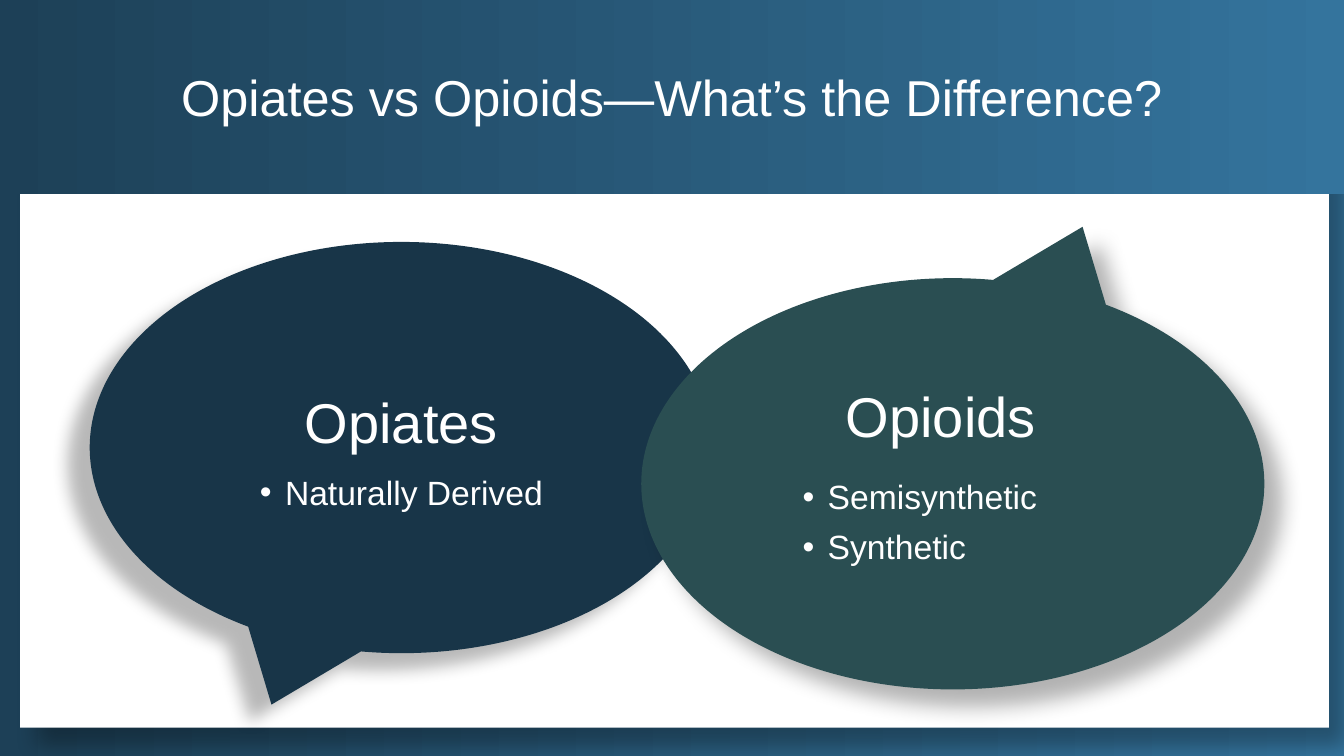
from dataclasses import dataclass

from lxml import etree
from pptx import Presentation
from pptx.dml.color import RGBColor
from pptx.enum.shapes import MSO_SHAPE
from pptx.enum.text import MSO_ANCHOR, MSO_AUTO_SIZE, PP_ALIGN
from pptx.oxml.ns import qn
from pptx.util import Inches, Pt

RECTANGLE = MSO_SHAPE.RECTANGLE
CALLOUT = MSO_SHAPE.OVAL_CALLOUT
MIDDLE = MSO_ANCHOR.MIDDLE
NO_FIT = MSO_AUTO_SIZE.NONE
CENTER, LEFT = PP_ALIGN.CENTER, PP_ALIGN.LEFT


@dataclass(frozen=True)
class Theme:
    font: str = "Arial"
    white: str = "FFFFFF"
    gradient: tuple = ("1D4057", "34749D")
    opiates: str = "183548"
    opioids: str = "2A4E52"
    shadow: str = "000000"
    title_size: int = 36
    heading_size: int = 40
    bullet_size: int = 24


class SlideBuilder:
    def __init__(self, slide, theme):
        self.slide = slide
        self.theme = theme

    def gradient(self, fill):
        fill.gradient()
        fill.gradient_angle = 0
        for stop, color in zip(fill.gradient_stops, self.theme.gradient):
            stop.color.rgb = RGBColor.from_string(color)

    def format_runs(self, paragraph, size):
        for run in paragraph.runs:
            run.font.name = self.theme.font
            run.font.size = Pt(size)
            run.font.color.rgb = RGBColor.from_string(self.theme.white)

    def title(self, text, box):
        title = self.slide.shapes.title
        title.left, title.top, title.width, title.height = map(Inches, box)
        self.gradient(title.fill)
        frame = title.text_frame
        frame.text = text
        frame.auto_size = NO_FIT
        frame.vertical_anchor = MIDDLE
        frame.paragraphs[0].alignment = CENTER
        self.format_runs(frame.paragraphs[0], self.theme.title_size)

    def shape(self, kind, box, color, opacity=30, blur=15, distance=18, angle=45):
        shape = self.slide.shapes.add_shape(kind, *map(Inches, box))
        shape.fill.solid()
        shape.fill.fore_color.rgb = RGBColor.from_string(color)
        shape.line.fill.background()
        # Soft outer shadow
        shape.shadow.inherit = False
        effects = shape._element.spPr.find(qn("a:effectLst"))
        shadow = etree.SubElement(
            effects, qn("a:outerShdw"), blurRad=str(Pt(blur)), dist=str(Pt(distance)),
            dir=str(angle * 60000), algn="ctr", rotWithShape="0")
        tint = etree.SubElement(shadow, qn("a:srgbClr"), val=self.theme.shadow)
        etree.SubElement(tint, qn("a:alpha"), val=str(opacity * 1000))
        return shape

    def send_to_back(self, shape):
        self.slide.shapes._spTree.insert(2, shape._element)

    def text_box(self, box):
        return self.slide.shapes.add_textbox(*map(Inches, box))

    def topic(self, shape, heading, bullets, insets, bullet_align,
              before, heading_after, bullet_after, line_spacing):
        frame = shape.text_frame
        frame.word_wrap = True
        frame.auto_size = NO_FIT
        frame.vertical_anchor = MIDDLE
        (frame.margin_left, frame.margin_top,
         frame.margin_right, frame.margin_bottom) = map(Inches, insets)
        frame.text = "\n".join([heading, *bullets])
        for paragraph in frame.paragraphs:
            paragraph.line_spacing = line_spacing
        first, *rest = frame.paragraphs
        first.alignment = CENTER
        first.space_after = Pt(heading_after)
        self.format_runs(first, self.theme.heading_size)
        for paragraph in rest:
            paragraph.alignment = bullet_align
            paragraph.space_before = Pt(before)
            paragraph.space_after = Pt(bullet_after)
            properties = paragraph._p.get_or_add_pPr()
            properties.set("marL", str(Inches(0.25)))
            properties.set("indent", str(Inches(-0.25)))
            etree.SubElement(properties, qn("a:buFont"), typeface=self.theme.font)
            etree.SubElement(properties, qn("a:buChar"), char="•")
            self.format_runs(paragraph, self.theme.bullet_size)


def main():
    theme = Theme()
    presentation = Presentation()
    presentation.slide_width = Inches(13.33)
    presentation.slide_height = Inches(7.5)
    slide = presentation.slides.add_slide(presentation.slide_layouts[5])
    builder = SlideBuilder(slide, theme)

    # Background, title band and white panel behind it
    builder.gradient(slide.background.fill)
    builder.title("Opiates vs Opioids—What’s the Difference?", (0, 0, 13.33, 1.92))
    panel = builder.shape(RECTANGLE, (0.2, 1.22, 12.98, 6), theme.white)
    builder.send_to_back(panel)

    # Opiates bubble, tail at lower left
    opiates = builder.shape(CALLOUT, (0.89, 2.4, 6.18, 4.08), theme.opiates,
                            opacity=28, blur=11.8, distance=19.7, angle=141)
    builder.topic(opiates, "Opiates", ["Naturally Derived"],
                  insets=(0.3, 0.1, 0.3, 0.05), bullet_align=CENTER,
                  before=6, heading_after=6, bullet_after=6, line_spacing=1.0)

    # Opioids bubble, tail at upper right
    opioids = builder.shape(CALLOUT, (6.36, 2.76, 6.18, 4.08), theme.opioids)
    opioids.adjustments[0] = 0.20833
    opioids.adjustments[1] = -0.625
    opioids_text = builder.text_box((7.46, 3.37, 4.44, 2.5))
    builder.topic(opioids_text, "Opioids", ["Semisynthetic", "Synthetic"],
                  insets=(0.5, 0.3, 1.2, 0.05), bullet_align=LEFT,
                  before=10, heading_after=12, bullet_after=0, line_spacing=0.9)

    presentation.save("out.pptx")


if __name__ == "__main__":
    main()
